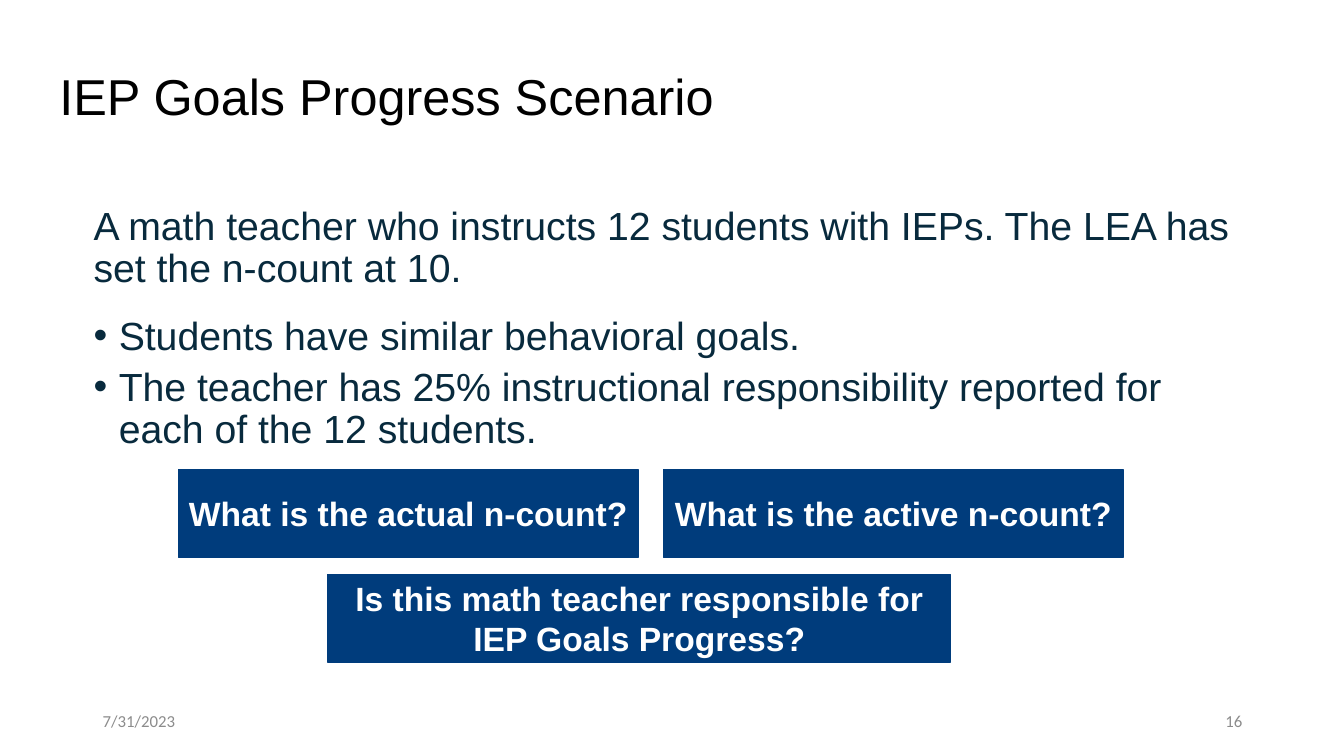
from lxml.etree import SubElement as Sub
from pptx import Presentation
from pptx.dml.color import RGBColor
from pptx.enum.shapes import MSO_SHAPE as Shape
from pptx.enum.text import MSO_ANCHOR as Anchor, PP_ALIGN as Align
from pptx.oxml.ns import qn
from pptx.util import Inches, Pt


def paint(code):
    return RGBColor.from_string(code)


class Deck:
    """Holds the style and the current slide."""
    font, small = "Arial", "Calibri"
    black, ink, navy, white, gray = "000000", "082A3D", "003C7C", "FFFFFF", "8C8C8C"

    def __init__(self):
        self.prs = Presentation()
        self.prs.slide_width, self.prs.slide_height = Inches(13.33), Inches(7.5)
        self.slide = self.prs.slides.add_slide(self.prs.slide_layouts[6])

    def style(self, para, size, color, font=None, bold=False):
        para.font.name = font or self.font
        para.font.size = Pt(size)
        para.font.bold = bold
        para.font.color.rgb = paint(color)

    def frame(self, box, anchor=Anchor.MIDDLE):
        frame = box.text_frame
        frame.word_wrap = True
        frame.vertical_anchor = anchor
        return frame

    def area(self, *place):
        return self.slide.shapes.add_textbox(*map(Inches, place))

    def title(self, text, *place):
        para = self.frame(self.area(*place)).paragraphs[0]
        para.text = text
        para.line_spacing = 0.9
        self.style(para, 36, self.black)

    def body(self, items, *place):
        frame = self.frame(self.area(*place), Anchor.TOP)
        for i, (text, after, dot) in enumerate(items):
            para = frame.add_paragraph() if i else frame.paragraphs[0]
            para.text = text
            para.line_spacing = 0.9
            para.space_after = Pt(after)
            if dot:
                self.bullet(para)
            self.style(para, 28, self.ink)

    def bullet(self, para):
        props = para._p.get_or_add_pPr()
        props.set("marL", str(Inches(0.25)))
        props.set("indent", str(Inches(-0.25)))
        Sub(props, qn("a:buFont")).set("typeface", self.font)
        Sub(props, qn("a:buChar")).set("char", "•")

    def card(self, text, *place):
        box = self.slide.shapes.add_shape(Shape.RECTANGLE, *map(Inches, place))
        box.shadow.inherit = False
        box.fill.solid()
        box.fill.fore_color.rgb = paint(self.navy)
        box.line.color.rgb = paint(self.navy)
        box.line.width = Pt(1)
        para = self.frame(box).paragraphs[0]
        para.text = text
        para.alignment = Align.CENTER
        para.space_after = Pt(18)
        self.style(para, 24, self.white, bold=True)

    def footer(self, text, left, align):
        para = self.frame(self.area(left, 6.95, 3, 0.4)).paragraphs[0]
        para.text = text
        para.alignment = align
        self.style(para, 12, self.gray, self.small)


def main():
    deck = Deck()
    deck.title("IEP Goals Progress Scenario", 0.49, 0.26, 11.5, 1.45)
    deck.body([
        ("A math teacher who instructs 12 students with IEPs. "
         "The LEA has set the n-count at 10.", 18, False),
        ("Students have similar behavioral goals.", 6, True),
        ("The teacher has 25% instructional responsibility reported "
         "for each of the 12 students.", 18, True),
    ], 0.83, 2, 11.5, 4.76)
    for left, kind in ((1.77, "actual"), (6.58, "active")):
        deck.card(f"What is the {kind} n-count?", left, 4.66, 4.56, 0.87)
    deck.card("Is this math teacher responsible for IEP Goals Progress?",
              3.25, 5.7, 6.18, 0.87)
    deck.footer("7/31/2023", 0.92, Align.LEFT)
    deck.footer("16", 9.42, Align.RIGHT)
    deck.prs.save("out.pptx")


if __name__ == "__main__":
    main()
